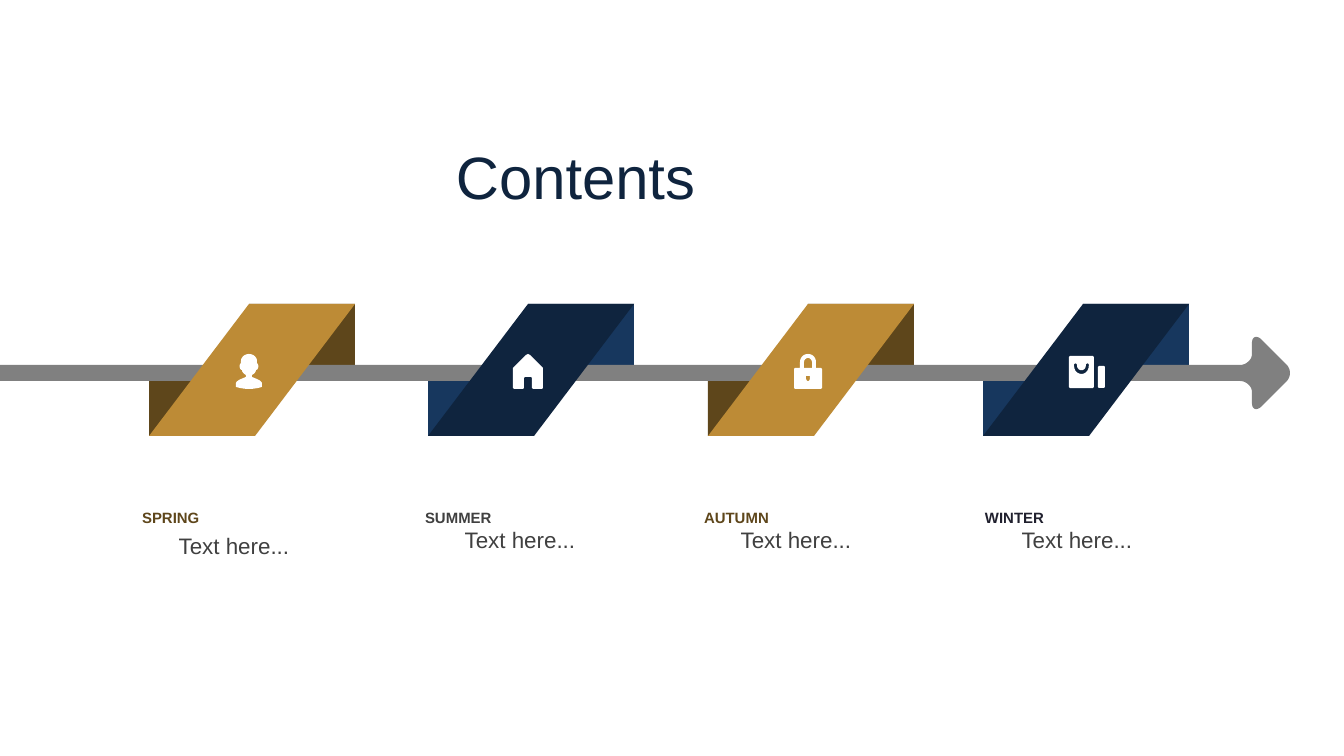
import pptx
import pptx.util
import pptx.dml.color
import pptx.enum.shapes
import pptx.enum.text

EMU_PER_PX = 914400 / 134.4
ALIGN = pptx.enum.text.PP_ALIGN
GOLD, NAVY = ("BD8B36", "5E461B"), ("0F243E", "17375E")  # face, fold
WHITE, GREY, DARK = "FFFFFF", "808080", "404040"
RIBBON_TOP, RIBBON_BOTTOM, ICON_Y = 304, 436, 372
FACE_W, SLANT, FOLD_H = 106, 100, 69

# left, colours, icon, label (left, width, height), heading, its colour, line spacing of the text
SEASONS = [
    (149, GOLD, "person", (142, 184, 54), "SPRING", "5E461B", 1.2),
    (428, NAVY, "house", (425, 190, 48), "SUMMER", DARK, None),
    (708, GOLD, "lock", (704, 184, 48), "AUTUMN", "5E461B", None),
    (983, NAVY, "bag", (985, 184, 48), "WINTER", "20202E", None),
]


def px(n):
    return pptx.util.Emu(round(n * EMU_PER_PX))


def rgb(color):
    return pptx.dml.color.RGBColor.from_string(color)


def flatten(steps, n=10):
    """Turn points (x, y) and cubic curves (x1, y1, x2, y2, x, y) into points."""
    points = []
    for step in steps:
        if len(step) == 2:
            points.append(step)
            continue
        curve = (points[-1], step[0:2], step[2:4], step[4:6])
        for i in range(1, n + 1):
            t = i / n
            weights = ((1 - t) ** 3, 3 * t * (1 - t) ** 2, 3 * t * t * (1 - t), t ** 3)
            points.append(tuple(sum(w * c[axis] for w, c in zip(weights, curve))
                                for axis in (0, 1)))
    return points


def mirror(steps, flip=(-1, 1)):
    """Complete a symmetric outline from its half."""
    half = flatten(steps)
    return half + [(x * flip[0], y * flip[1]) for x, y in reversed(half)]


# Icons: shapes made of contours, relative to the icon's middle
ICONS = {
    "person": [[mirror([
        (0, -18), (4, -18, 8, -15, 8, -11), (8, -9), (9, -8, 10, -6, 9, -4),
        (9, -3, 8, -2, 7, -2), (7, 0, 5, 2, 3, 3), (3, 5), (5, 6, 12, 8, 13, 11),
        (13, 15), (13, 15, 7, 17, 0, 17)])]],
    "house": [[mirror([
        (0, -18), (2, -17), (15, -4), (15, 16), (14, 17), (5, 17), (4, 16),
        (4, 6), (3, 5), (0, 5)])]],
    "lock": [[
        mirror([(0, -18), (5, -18, 8, -14, 8, -10), (8, -4), (13, -4), (14, -3),
                (14, 16), (13, 17), (0, 17)]),
        mirror([(0, -14), (2, -14, 4, -12, 4, -10), (4, -4), (0, -4)]),
        mirror([(0, 4), (2, 4), (2, 7), (1, 9), (0, 9)])]],
    "bag": [
        [[(-13, -16), (10, -16), (11, -15), (11, 15), (10, 16), (-13, 16),
          (-14, 15), (-14, -15)],
         flatten([(-9, -7), (-9, -9, -6, -9, -6, -7), (-6, 0, 3, 0, 3, -7),
                  (3, -9, 6, -9, 6, -7), (6, 5, -9, 5, -9, -7)])],
        [[(16, -6), (21, -6), (22, -5), (22, 15), (21, 16), (16, 16), (15, 15), (15, -5)]]],
}


def paint(sp, color):
    sp.shadow.inherit = False
    sp.fill.solid()
    sp.fill.fore_color.rgb = rgb(color)
    sp.line.fill.background()


def add_rect(s, x, y, w, h, color):
    kind = pptx.enum.shapes.MSO_SHAPE.RECTANGLE
    paint(s.shapes.add_shape(kind, px(x), px(y), px(w), px(h)), color)


def add_outline(s, contours, color, dx=0, dy=0):
    builder = None
    for contour in contours:
        points = [(px(x + dx), px(y + dy)) for x, y in contour]
        if builder is None:
            builder = s.shapes.build_freeform(*points[0], scale=1.0)
        else:
            builder.move_to(*points[0])
        builder.add_line_segments(points[1:], close=True)
    paint(builder.convert_to_shape(), color)


def add_text(s, x, y, w, h, paragraphs):
    tf = s.shapes.add_textbox(px(x), px(y), px(w), px(h)).text_frame
    tf.word_wrap = True
    tf.auto_size = pptx.enum.text.MSO_AUTO_SIZE.SHAPE_TO_FIT_TEXT
    tf.margin_left = tf.margin_right = tf.margin_top = tf.margin_bottom = 0
    for i, (text, size, color, bold, align, spacing) in enumerate(paragraphs):
        p = tf.add_paragraph() if i else tf.paragraphs[0]
        p.alignment = align
        p.line_spacing = spacing
        r = p.add_run()
        r.text = text
        r.font.name = "Arial"
        r.font.size = pptx.util.Pt(size)
        r.font.bold = bold
        r.font.color.rgb = rgb(color)


def add_folds(s, left, color):
    add_rect(s, left, RIBBON_BOTTOM - FOLD_H, FACE_W, FOLD_H, color)
    add_rect(s, left + SLANT, RIBBON_TOP, FACE_W, FOLD_H, color)


def add_arrow(s):
    # Upper half about the arrow's axis
    half = [(1290, 0), (1290, -3, 1289, -6, 1286, -9), (1261, -34),
            (1256, -38, 1252, -36, 1252, -30), (1252, -19),
            (1252, -13, 1246, -8, 1240, -8), (-47, -8)]
    add_outline(s, [mirror(half, (1, -1))], GREY, dy=373)


def add_face(s, left, color):
    corners = [(left + SLANT + FACE_W, RIBBON_TOP), (left + SLANT, RIBBON_TOP),
               (left, RIBBON_BOTTOM), (left + FACE_W, RIBBON_BOTTOM)]
    add_outline(s, [corners], color)


def main():
    prs = pptx.Presentation()
    prs.slide_width, prs.slide_height = px(1344), px(756)
    s = prs.slides.add_slide(prs.slide_layouts[6])

    # Timeline: folds behind the arrow, faces in front of it
    for left, (_, fold), *_ in SEASONS:
        add_folds(s, left, fold)
    add_arrow(s)
    for left, (face, _), icon, *_ in SEASONS:
        add_face(s, left, face)
        for contours in ICONS[icon]:
            add_outline(s, contours, WHITE, left + SLANT, ICON_Y)

    # Title and season labels
    add_text(s, 456, 125, 332, 195,
             [("Contents", 32, "0F243E", False, ALIGN.JUSTIFY, 1.2)])
    for *_, (x, w, h), heading, color, spacing in SEASONS:
        add_text(s, x, 505, w, h, [
            (heading, 8, color, True, ALIGN.JUSTIFY, 1.2),
            ("Text here...", 12, DARK, False, ALIGN.CENTER, spacing)])

    prs.save("out.pptx")


if __name__ == "__main__":
    main()
